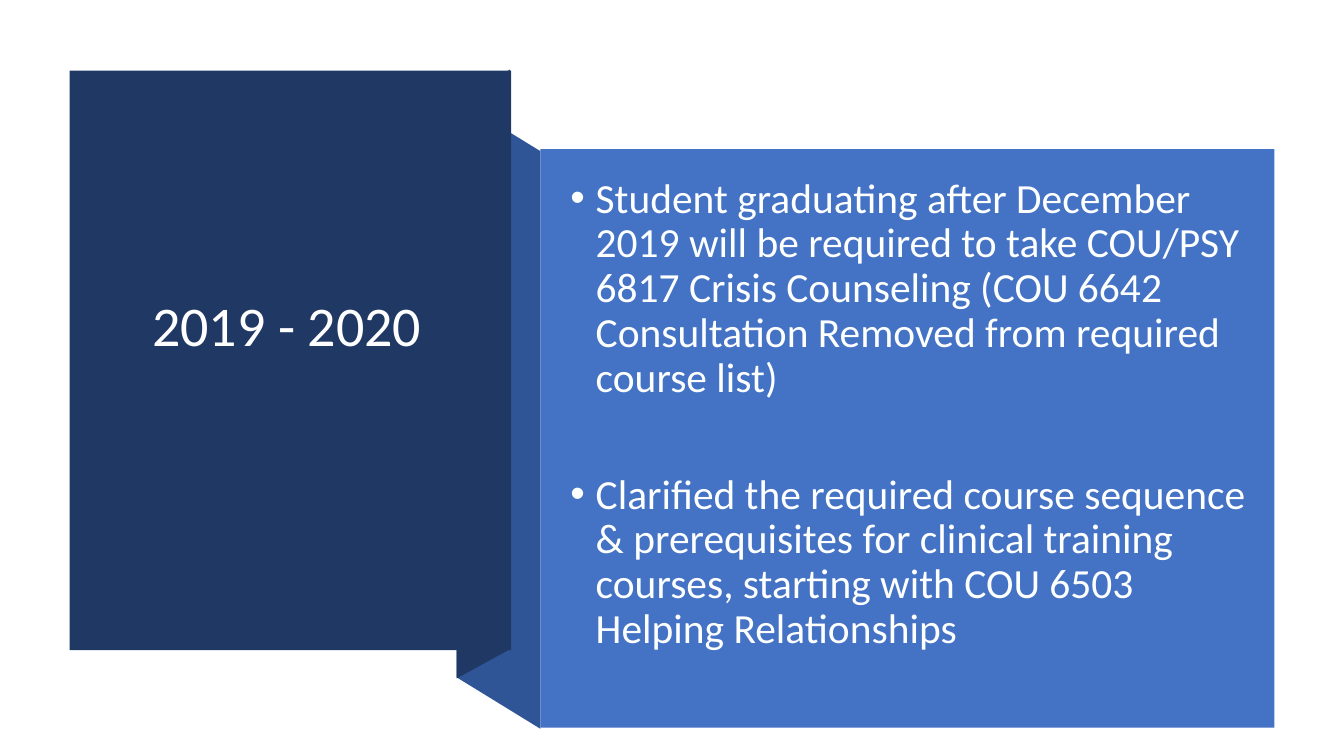
"""Draw a folded banner with a year panel and a panel of programme changes."""
import dataclasses
import typing

import pptx
import pptx.dml.color
import pptx.enum.shapes
import pptx.enum.text
import pptx.oxml.ns
import pptx.util
from lxml import etree

SCALE = 9144


@dataclasses.dataclass(frozen=True)
class Theme:
    dark: str = "203864"
    mid: str = "2F5597"
    blue: str = "4472C4"
    white: str = "FFFFFF"
    soft: str = "FEFFFF"
    font: str = "Calibri"
    title: float = 40
    body: float = 29.6
    gap: float = 51.5
    line: float = 0.9


class Box(typing.NamedTuple):
    left: int
    top: int
    width: int
    height: int


class Panel(typing.NamedTuple):
    box: Box
    color: str


class Fold(typing.NamedTuple):
    points: list[tuple[int, int]]
    color: str


class Label(typing.NamedTuple):
    box: Box
    lines: list[str]
    size: float
    color: str
    anchor: pptx.enum.text.MSO_ANCHOR
    bullet: bool


THEME = Theme()
MIDDLE = pptx.enum.text.MSO_ANCHOR.MIDDLE
TOP = pptx.enum.text.MSO_ANCHOR.TOP

FOLDS = [
    Fold([(536, 723), (453, 672), (453, 99), (536, 150)], THEME.mid),
    Fold([(506, 644), (453, 673), (453, 98), (506, 69)], THEME.dark),
]
PANELS = [
    Panel(Box(69, 70, 438, 575), THEME.dark),
    Panel(Box(536, 148, 728, 574), THEME.blue),
]
LABELS = [
    Label(Box(141, 107, 332, 438), ["2019 - 2020"],
          THEME.title, THEME.white, MIDDLE, False),
    Label(Box(556, 176, 695, 519), [
        "Student graduating after December 2019 will be required to take "
        "COU/PSY 6817 Crisis Counseling (COU 6642 Consultation Removed from "
        "required course list)",
        "Clarified the required course sequence & prerequisites for clinical "
        "training courses, starting with COU 6503 Helping Relationships",
    ], THEME.body, THEME.soft, TOP, True),
]


def px(size: int) -> pptx.util.Emu:
    """Turn px into EMU."""
    return pptx.util.Emu(size * SCALE)


def place(box: Box) -> list[pptx.util.Emu]:
    """Turn a box into EMU."""
    return [px(size) for size in box]


def rgb(color: str) -> pptx.dml.color.RGBColor:
    """Read a hex colour."""
    return pptx.dml.color.RGBColor.from_string(color)


def paint(shape: typing.Any, color: str) -> None:
    """Give a shape a flat fill with no line or shadow."""
    shape.shadow.inherit = False
    shape.fill.solid()
    shape.fill.fore_color.rgb = rgb(color)
    shape.line.fill.background()


def draw_fold(shapes: typing.Any, fold: Fold) -> None:
    """Draw one side of the ribbon fold."""
    start, *rest = fold.points
    path = shapes.build_freeform(*start, scale=SCALE)
    path.add_line_segments(rest, close=True)
    paint(path.convert_to_shape(), fold.color)


def draw_panel(shapes: typing.Any, panel: Panel) -> None:
    """Draw a flat panel."""
    kind = pptx.enum.shapes.MSO_SHAPE.RECTANGLE
    paint(shapes.add_shape(kind, *place(panel.box)), panel.color)


def add_bullet(para: typing.Any) -> None:
    """Hang a round bullet before a paragraph."""
    props = para._p.get_or_add_pPr()
    props.set("marL", str(px(25)))
    props.set("indent", str(px(-25)))
    qn = pptx.oxml.ns.qn
    etree.SubElement(props, qn("a:buFont"), typeface="Arial")
    etree.SubElement(props, qn("a:buChar"), char="•")


def draw_label(shapes: typing.Any, label: Label) -> None:
    """Write the paragraphs of a label."""
    frame = shapes.add_textbox(*place(label.box)).text_frame
    frame.word_wrap = True
    frame.vertical_anchor = label.anchor
    frame.margin_top = frame.margin_bottom = 0
    for rank, text in enumerate(label.lines):
        para = frame.add_paragraph() if rank else frame.paragraphs[0]
        para.line_spacing = THEME.line
        para.space_before = pptx.util.Pt(THEME.gap if rank else 0)
        if label.bullet:
            add_bullet(para)
        run = para.add_run()
        run.text = text
        run.font.name = THEME.font
        run.font.size = pptx.util.Pt(label.size)
        run.font.color.rgb = rgb(label.color)


def main() -> None:
    """Build and save the slide."""
    deck = pptx.Presentation()
    deck.slide_width, deck.slide_height = px(1333), px(750)
    shapes = deck.slides.add_slide(deck.slide_layouts[6]).shapes
    for fold in FOLDS:
        draw_fold(shapes, fold)
    for panel in PANELS:
        draw_panel(shapes, panel)
    for label in LABELS:
        draw_label(shapes, label)
    deck.save("out.pptx")


if __name__ == "__main__":
    main()
